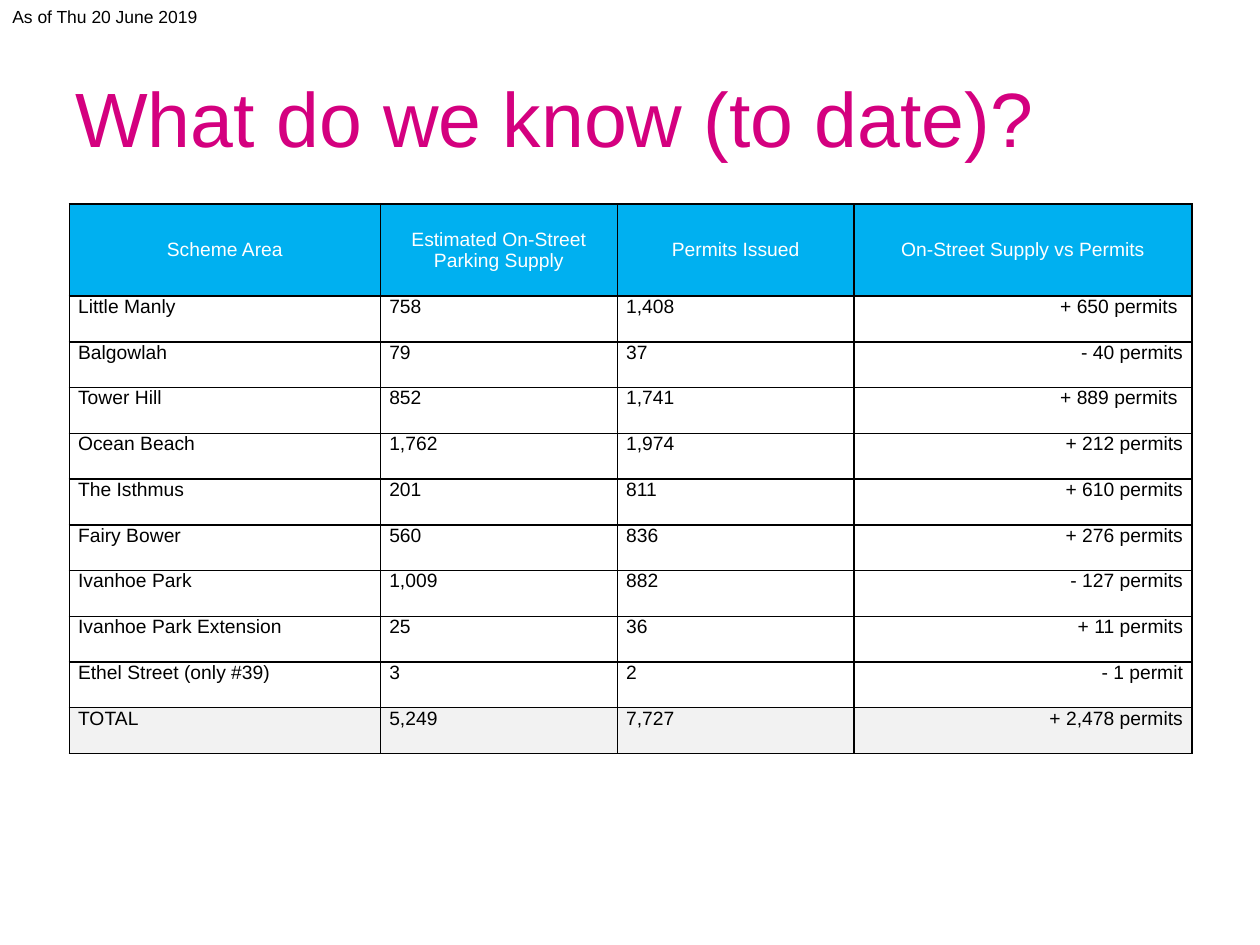
from lxml import etree
from pptx import Presentation
from pptx.dml.color import RGBColor
from pptx.enum import text
from pptx.oxml import ns
from pptx.util import Inches, Pt

COLOURS = {
    "title": "D4007F",
    "header": "00B0F0",
    "total": "F2F2F2",
    "light": "FFFFFF",
    "dark": "000000",
}
FONT = "Arial"
COLUMN_WIDTHS = [2.47, 1.88, 1.88, 2.68]
HEADER_HEIGHT = 0.73
TABLE_HEIGHT = 4.36
ROWS = [
    ["Scheme Area", "Estimated On-Street Parking Supply", "Permits Issued", "On-Street Supply vs Permits"],
    ["Little Manly", "758", "1,408", "+ 650 permits "],
    ["Balgowlah", "79", "37", "- 40 permits"],
    ["Tower Hill", "852", "1,741", "+ 889 permits "],
    ["Ocean Beach", "1,762", "1,974", "+ 212 permits"],
    ["The Isthmus", "201", "811", "+ 610 permits"],
    ["Fairy Bower", "560", "836", "+ 276 permits"],
    ["Ivanhoe Park", "1,009", "882", "- 127 permits"],
    ["Ivanhoe Park Extension", "25", "36", "+ 11 permits"],
    ["Ethel Street (only #39)", "3", "2", "- 1 permit"],
    ["TOTAL", "5,249", "7,727", "+ 2,478 permits"],
]


class SlideBuilder:
    """Adds consistently styled elements to one slide."""

    def __init__(self, slide, font, colours):
        self.slide = slide
        self.font = font
        self.colours = colours

    def rgb(self, name):
        return RGBColor.from_string(self.colours[name])

    def set_text(self, text_frame, content, size, colour, alignment=text.PP_ALIGN.LEFT):
        text_frame.text = content
        paragraph = text_frame.paragraphs[0]
        paragraph.alignment = alignment
        font = paragraph.runs[0].font
        font.name = self.font
        font.size = Pt(size)
        font.color.rgb = self.rgb(colour)

    def text_box(self, content, left, top, width, height, size, colour, anchor=text.MSO_ANCHOR.TOP):
        shape = self.slide.shapes.add_textbox(Inches(left), Inches(top), Inches(width), Inches(height))
        text_frame = shape.text_frame
        text_frame.word_wrap = True
        text_frame.vertical_anchor = anchor
        self.set_text(text_frame, content, size, colour)

    def borders(self, cell, colour, width):
        properties = cell._tc.get_or_add_tcPr()
        for index, side in enumerate(("lnL", "lnR", "lnT", "lnB")):
            line = etree.Element(ns.qn(f"a:{side}"), w=str(Pt(width)))
            fill = etree.SubElement(line, ns.qn("a:solidFill"))
            etree.SubElement(fill, ns.qn("a:srgbClr"), val=self.colours[colour])
            properties.insert(index, line)

    def cell(self, cell, content, colour, alignment, fill, anchor):
        cell.margin_left = cell.margin_right = Inches(0.07)
        cell.margin_top = cell.margin_bottom = 0
        cell.vertical_anchor = anchor
        self.set_text(cell.text_frame, content, 11, colour, alignment)
        if fill:
            cell.fill.solid()
            cell.fill.fore_color.rgb = self.rgb(fill)
        else:
            cell.fill.background()
        self.borders(cell, "dark", 1)

    def table(self, rows, left, top, widths, header_height, height):
        frame = self.slide.shapes.add_table(
            len(rows), len(widths), Inches(left), Inches(top), Inches(sum(widths)), Inches(height))
        table = frame.table
        for column, width in zip(table.columns, widths):
            column.width = Inches(width)
        row_height = (height - header_height) / (len(rows) - 1)
        last_row, last_column = len(rows) - 1, len(widths) - 1
        for r, values in enumerate(rows):
            is_header = r == 0
            table.rows[r].height = Inches(header_height if is_header else row_height)
            fill = "header" if is_header else "total" if r == last_row else None
            anchor = text.MSO_ANCHOR.MIDDLE if is_header else text.MSO_ANCHOR.TOP
            for c, value in enumerate(values):
                if is_header:
                    alignment = text.PP_ALIGN.CENTER
                else:
                    alignment = text.PP_ALIGN.RIGHT if c == last_column else text.PP_ALIGN.LEFT
                self.cell(table.cell(r, c), value, "light" if is_header else "dark", alignment, fill, anchor)


def main():
    presentation = Presentation()
    presentation.slide_width = Inches(10)
    presentation.slide_height = Inches(7.5)
    slide = presentation.slides.add_slide(presentation.slide_layouts[6])
    builder = SlideBuilder(slide, FONT, COLOURS)
    builder.text_box("What do we know (to date)?", 0.5, 0.3, 9.46, 1.25, 44, "title", text.MSO_ANCHOR.MIDDLE)
    builder.table(ROWS, 0.55, 1.62, COLUMN_WIDTHS, HEADER_HEIGHT, TABLE_HEIGHT)
    builder.text_box("As of Thu 20 June 2019", 0, 0, 1.97, 0.27, 10, "dark")
    presentation.save("out.pptx")


if __name__ == "__main__":
    main()
